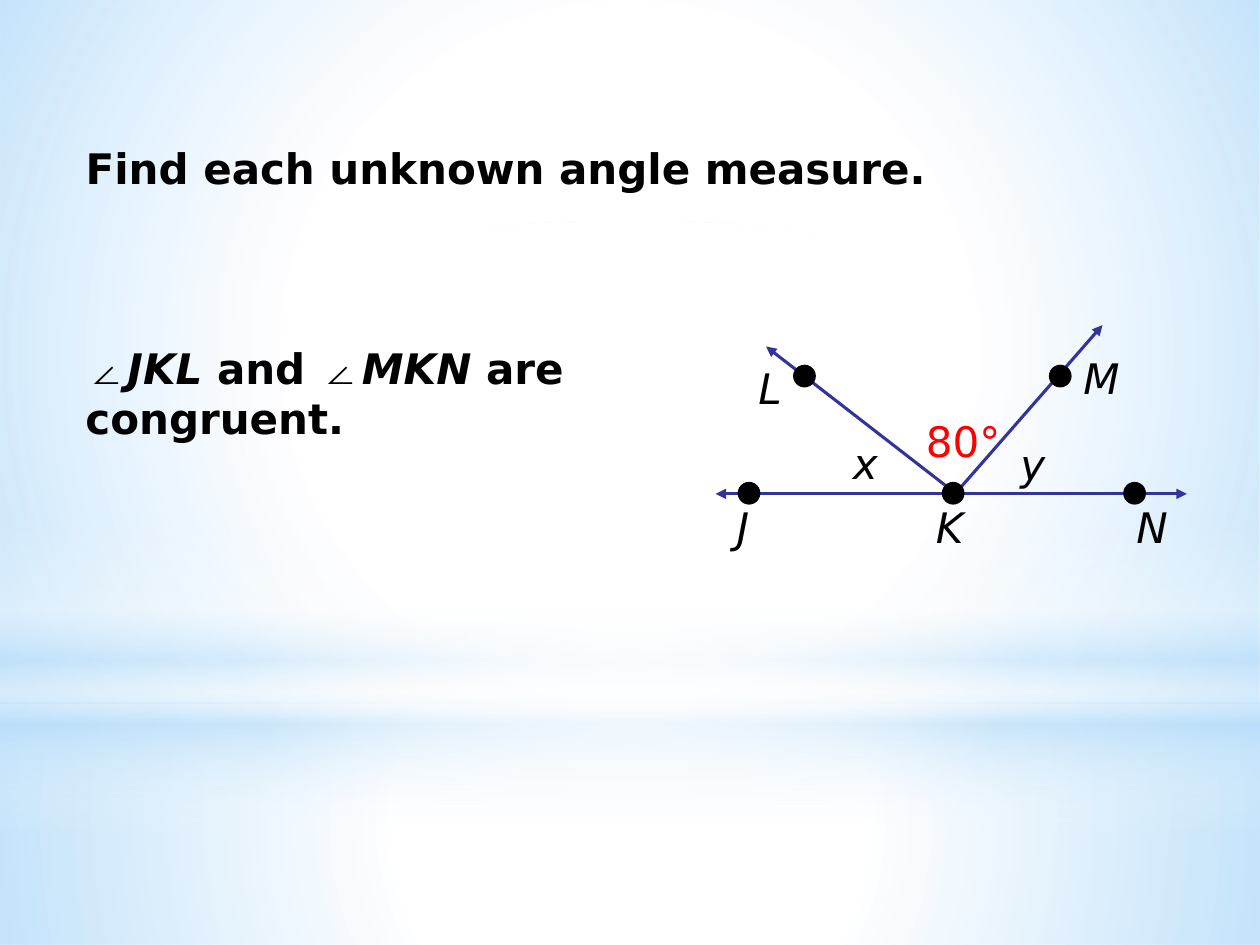
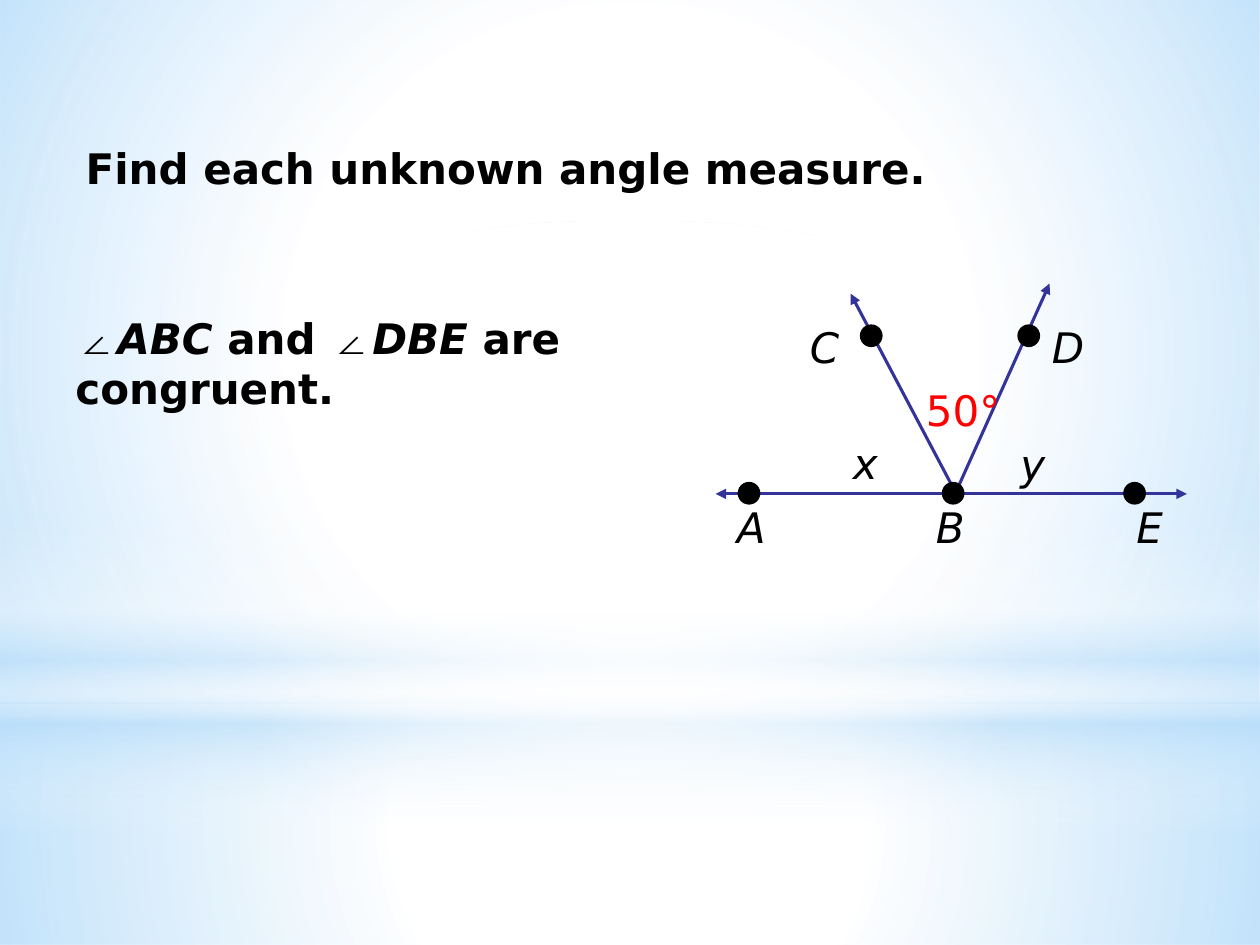
from lxml import etree
from pptx import Presentation
from pptx.dml.color import RGBColor
from pptx.enum.shapes import MSO_CONNECTOR, MSO_SHAPE
from pptx.enum.text import MSO_ANCHOR, MSO_AUTO_SIZE, PP_ALIGN
from pptx.oxml import parse_xml
from pptx.oxml.ns import nsdecls, qn
from pptx.util import Inches, Pt

RECT, OVAL = MSO_SHAPE.RECTANGLE, MSO_SHAPE.OVAL
STRAIGHT = MSO_CONNECTOR.STRAIGHT
TOP, LEFT = MSO_ANCHOR.TOP, PP_ALIGN.LEFT
GROW = MSO_AUTO_SIZE.SHAPE_TO_FIT_TEXT

COLORS = {"ink": "000000", "ray": "333399", "known": "FF0000",
          "white": "FFFFFF", "sky": "B4DCFA"}
SANS, SIGN = "DejaVu Sans", "Arial"
ROUND = ('<a:path path="circle"><a:fillToRect l="50000" t="50000" '
         'r="50000" b="50000"/></a:path>')
DOWN = '<a:lin ang="5400000" scaled="0"/>'

# Place, outline, gradient stops (position, colour, opacity), direction
BANDS = [
    ((0, 5.58, 10, 1.92), RECT,
     [(0, "white", 91), (37, "white", 76), (100, "sky", 79)], ROUND),
    ((0, 0, 10, 5.58), RECT,
     [(0, "white", 89), (48, "white", 62), (100, "sky", 79)], ROUND),
    ((0, 4.12, 10, 2.5), RECT,
     [(0, "white", 0), (29, "white", 30), (45, "sky", 40),
      (55, "white", 26), (65, "sky", 60), (100, "white", 0)], DOWN),
    ((0, 1.75, 10, 5.58), OVAL,
     [(0, "white", 100), (56, "white", 0)], ROUND),
]

BASE = 3.92  # height of the straight line
DOT = 0.17
TASKS = [
    {"angles": ("JKL", "MKN"), "text": (0.58, 2.67),
     "known": "80°", "top": 3.25,
     "tips": [(8.75, 2.58), (6.08, 2.75)],
     "names": [(8.5, 2.75), (5.92, 2.83)],
     "dots": [(8.33, 2.9), (6.3, 2.9)]},
    {"angles": ("ABC", "DBE"), "text": (0.5, 2.43),
     "known": "50°", "top": 3,
     "tips": [(8.33, 2.25), (6.75, 2.33)],
     "names": [(8.25, 2.5), (6.33, 2.5)],
     "dots": [(8.08, 2.58), (6.83, 2.58)]},
]


def write(box, runs, bold=False, color="ink"):
    """Fill a text shape with (text, font, italic) runs in the deck's style."""
    frame = box.text_frame
    frame.word_wrap = True
    frame.auto_size = GROW
    frame.vertical_anchor = TOP
    para = frame.paragraphs[0]
    para.alignment = LEFT
    para.space_before = Pt(15)
    for text, name, italic in runs:
        run = para.add_run()
        run.text = text
        font = run.font
        font.name, font.size = name, Pt(24)
        font.bold, font.italic = bold, italic
        font.color.rgb = RGBColor.from_string(COLORS[color])


deck = Presentation()
deck.slide_width, deck.slide_height = Inches(10), Inches(7.5)
layout = deck.slide_layouts[5]
slides = [deck.slides.add_slide(layout) for task in TASKS]

# Shared backdrop: drawn once, then moved behind everything on the layout
for order, (place, form, stops, course) in enumerate(BANDS):
    band = slides[0].shapes.add_shape(form, *map(Inches, place))
    band.shadow.inherit = False
    band.line.fill.background()
    marks = "".join(
        f'<a:gs pos="{pos * 1000}"><a:srgbClr val="{COLORS[tone]}">'
        f'<a:alpha val="{alpha * 1000}"/></a:srgbClr></a:gs>'
        for pos, tone, alpha in stops)
    band.element.spPr.insert(2, parse_xml(
        f'<a:gradFill {nsdecls("a")} rotWithShape="1">'
        f'<a:gsLst>{marks}</a:gsLst>{course}</a:gradFill>'))
    layout.shapes.element.insert(2 + order, band.element)

for slide, task in zip(slides, TASKS):
    title = slide.shapes.title
    title.left, title.top = Inches(0.58), Inches(1.08)
    title.width, title.height = Inches(8.75), Inches(0.51)
    write(title, [("Find each unknown angle measure.", SANS, False)], bold=True)

    first, second = task["angles"]
    place = (*task["text"], 4.75, 0.9)
    fact = slide.shapes.add_textbox(*map(Inches, place))
    write(fact, [("∠", SIGN, False), (first + " ", SANS, True),
                 ("and ", SANS, False),
                 ("∠", SIGN, False), (second + " ", SANS, True),
                 ("are congruent.", SANS, False)], bold=True)

    figure = slide.shapes.add_group_shape().shapes
    right, left = task["tips"]
    rays = [(7.35, (5.68, BASE)), (7.33, (9.42, BASE)),
            (7.58, right), (7.59, left)]
    for start, tip in rays:
        ray = figure.add_connector(
            STRAIGHT, *map(Inches, (start, BASE, *tip)))
        ray.line.color.rgb = RGBColor.from_string(COLORS["ray"])
        ray.line.width = Pt(1.75)
        props = ray.element.spPr
        etree.SubElement(props.find(qn("a:ln")), qn("a:tailEnd"),
                         type="triangle")
        etree.SubElement(props, qn("a:effectLst"))

    upper, lower = task["names"]
    labels = [("x", 6.67, 3.42, 0.67), ("y", 8, 3.43, 0.67),
              (second[0], *upper, 0.83), (first[2], *lower, 0.57),
              (first[0], 5.75, 3.93, 0.33), (first[1], 7.33, 3.93, 0.33),
              (second[2], 8.92, 3.93, 0.33),
              (task["known"], 7.25, task["top"], 1.08)]
    for text, x, y, wide in labels:
        label = figure.add_textbox(*map(Inches, (x, y, wide, 0.5)))
        known = text == task["known"]
        write(label, [(text, SANS, not known)],
              color="known" if known else "ink")

    for x, y in [(5.86, 3.83), (7.48, 3.83), (8.92, 3.83), *task["dots"]]:
        dot = figure.add_shape(OVAL, *map(Inches, (x, y, DOT, DOT)))
        dot.shadow.inherit = False
        dot.fill.solid()
        dot.fill.fore_color.rgb = RGBColor.from_string(COLORS["ink"])
        dot.line.color.rgb = RGBColor.from_string(COLORS["ink"])
        dot.line.width = Pt(0.75)

deck.save("out.pptx")
